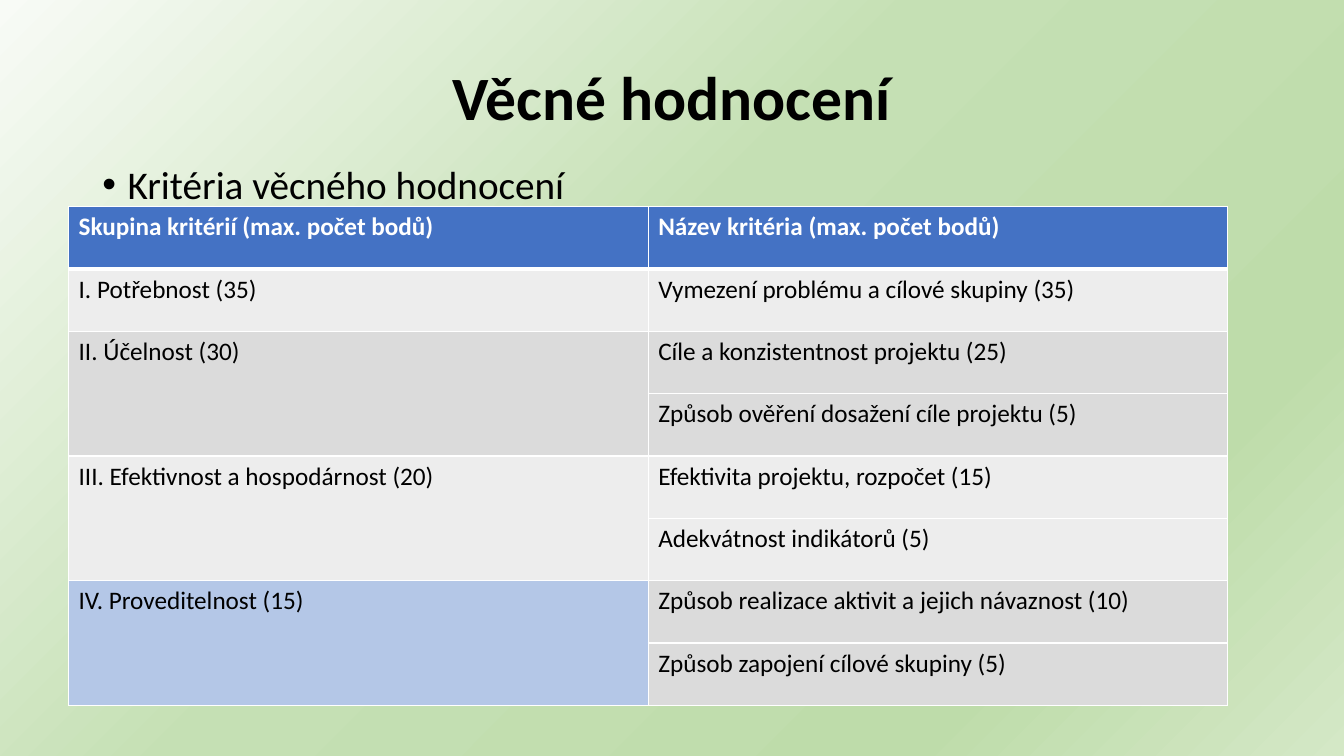
import dataclasses

import pptx
import pptx.dml.color
import pptx.enum.text
import pptx.oxml
import pptx.oxml.ns
import pptx.util

Pt = pptx.util.Pt
RGB = pptx.dml.color.RGBColor
qn = pptx.oxml.ns.qn

BLACK = RGB(0x00, 0x00, 0x00)
WHITE = RGB(0xFF, 0xFF, 0xFF)
BLUE = RGB(0x44, 0x72, 0xC4)
PALE = RGB(0xB4, 0xC7, 0xE7)
LIGHT = RGB(0xED, 0xED, 0xED)
GREY = RGB(0xDB, 0xDB, 0xDB)
STOPS = (
    (0, RGB(0xF8, 0xFB, 0xF6)),
    (44, RGB(0xC5, 0xE0, 0xB4)),
    (79, RGB(0xBE, 0xDC, 0xAA)),
    (100, RGB(0xD4, 0xE8, 0xC6)),
)
FONT = "Calibri"
SPACE = 'xmlns:a="http://schemas.openxmlformats.org/drawingml/2006/main"'


@dataclasses.dataclass(frozen=True)
class Group:
    name: str
    items: tuple[str, ...]
    left: RGB
    right: RGB


GROUPS = (
    Group("Skupina kritérií (max. počet bodů)",
          ("Název kritéria (max. počet bodů)",), BLUE, BLUE),
    Group("I. Potřebnost (35)",
          ("Vymezení problému a cílové skupiny (35)",), LIGHT, LIGHT),
    Group("II. Účelnost (30)",
          ("Cíle a konzistentnost projektu (25)",
           "Způsob ověření dosažení cíle projektu (5)"), GREY, GREY),
    Group("III. Efektivnost a hospodárnost (20)",
          ("Efektivita projektu, rozpočet (15)",
           "Adekvátnost indikátorů (5)"), LIGHT, LIGHT),
    Group("IV. Proveditelnost (15)",
          ("Způsob realizace aktivit a jejich návaznost (10)",
           "Způsob zapojení cílové skupiny (5)"), PALE, GREY),
)


def write(frame, text: str, size: float, color: RGB, bold: bool = False):
    frame.text = text
    para = frame.paragraphs[0]
    font = para.runs[0].font
    font.name, font.size, font.bold = FONT, Pt(size), bold
    font.color.rgb = color
    return para


def place(shape, left: float, top: float, width: float, height: float) -> None:
    shape.left, shape.top = Pt(left), Pt(top)
    shape.width, shape.height = Pt(width), Pt(height)


def paint(slide) -> None:
    fill = slide.background.fill
    fill.gradient()
    fill.gradient_angle = 315
    stops = slide.element.find(".//" + qn("a:gsLst"))
    for stop in list(stops):
        stops.remove(stop)
    for spot, color in STOPS:
        stops.append(pptx.oxml.parse_xml(
            f'<a:gs {SPACE} pos="{spot * 1000}"><a:srgbClr val="{color}"/></a:gs>'))


def edge(cell, row: int) -> None:
    props = cell._tc.get_or_add_tcPr()
    thick = {(0, "B"), (1, "T")}
    for slot, side in enumerate("LRTB"):
        width = Pt(3 if (row, side) in thick else 1)
        props.insert(slot, pptx.oxml.parse_xml(
            f'<a:ln{side} {SPACE} w="{width}"><a:solidFill>'
            f'<a:srgbClr val="{WHITE}"/></a:solidFill></a:ln{side}>'))


def dress(cell, row: int, fill: RGB) -> None:
    cell.fill.solid()
    cell.fill.fore_color.rgb = fill
    edge(cell, row)


def label(cell, row: int, text: str) -> None:
    head = row == 0
    write(cell.text_frame, text, 18, WHITE if head else BLACK, head)


def build(slide) -> None:
    count = sum(len(group.items) for group in GROUPS)
    grid = slide.shapes.add_table(
        count, 2, Pt(49), Pt(147.6), Pt(828), Pt(356.4)).table
    row = 0
    for group in GROUPS:
        first = row
        for item in group.items:
            dress(grid.cell(row, 0), row, group.left)
            dress(grid.cell(row, 1), row, group.right)
            label(grid.cell(row, 1), row, item)
            row += 1
        label(grid.cell(first, 0), first, group.name)
        if row - first > 1:
            grid.cell(first, 0).merge(grid.cell(row - 1, 0))


def main() -> None:
    deck = pptx.Presentation()
    deck.slide_width, deck.slide_height = Pt(960), Pt(540)
    slide = deck.slides.add_slide(deck.slide_layouts[1])
    paint(slide)

    title, body = slide.shapes.title, slide.placeholders[1]
    place(title, 66, 28.8, 828, 85.7)
    title.text_frame.vertical_anchor = pptx.enum.text.MSO_ANCHOR.MIDDLE
    para = write(title.text_frame, "Věcné hodnocení", 44, BLACK, True)
    para.alignment = pptx.enum.text.PP_ALIGN.CENTER
    para.line_spacing = 0.9

    place(body, 66, 114.5, 828, 342.7)
    para = write(body.text_frame, "Kritéria věcného hodnocení", 28, BLACK)
    para.line_spacing, para.space_before = 0.9, Pt(10)
    props = para._p.get_or_add_pPr()
    props.set("marL", str(Pt(18)))
    props.set("indent", str(Pt(-18)))

    build(slide)
    deck.save("out.pptx")


if __name__ == "__main__":
    main()
